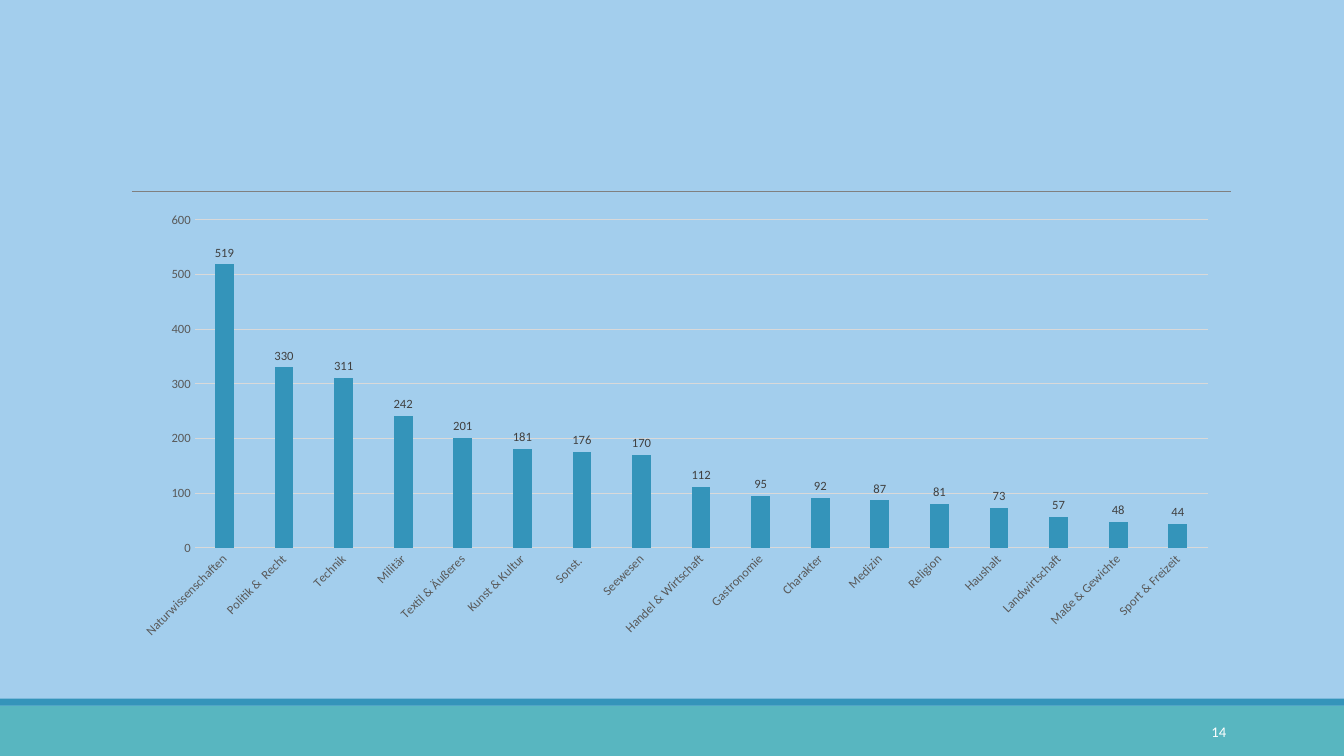
"""Build a slide with a column chart of word counts by subject field."""
from dataclasses import dataclass

from lxml.etree import SubElement
from pptx import Presentation
from pptx.chart.data import CategoryChartData as ChartData
from pptx.dml.color import RGBColor
from pptx.enum.chart import XL_CHART_TYPE as ChartType
from pptx.enum.chart import XL_LABEL_POSITION as LabelPosition
from pptx.enum.chart import XL_TICK_MARK as TickMark
from pptx.enum.shapes import MSO_CONNECTOR as Connector
from pptx.enum.shapes import MSO_SHAPE as Shape
from pptx.enum.text import MSO_ANCHOR as Anchor
from pptx.enum.text import PP_ALIGN as Align
from pptx.oxml.ns import qn
from pptx.util import Pt

WIDTH, HEIGHT = 960, 540
FOOTER_TOP = 504
STRIPE_HEIGHT = 5

COUNTS = {
    "Naturwissenschaften": 519,
    "Politik &  Recht": 330,
    "Technik": 311,
    "Militär": 242,
    "Textil & Äußeres": 201,
    "Kunst & Kultur": 181,
    "Sonst. ": 176,
    "Seewesen": 170,
    "Handel & Wirtschaft": 112,
    "Gastronomie": 95,
    "Charakter": 92,
    "Medizin": 87,
    "Religion": 81,
    "Haushalt": 73,
    "Landwirtschaft": 57,
    "Maße & Gewichte": 48,
    "Sport & Freizeit": 44,
}


@dataclass(frozen=True)
class Theme:
    """Colours, font and type sizes."""

    background: str = "A3CEED"
    footer: str = "58B6C0"
    accent: str = "3494BA"
    rule: str = "808080"
    grid: str = "D9D9D9"
    axis_text: str = "595959"
    label_text: str = "404040"
    footer_text: str = "FFFFFF"
    font: str = "Calibri"
    chart_size: float = 9
    number_size: float = 10.5


def format_font(font, name, size, color):
    """Set the typeface, size and colour of a font."""
    font.name = name
    font.size = Pt(size)
    font.color.rgb = RGBColor.from_string(color)


def write_text(frame, text, align=Align.LEFT, anchor=Anchor.MIDDLE, **font_format):
    """Write one formatted paragraph into a text frame."""
    frame.word_wrap = True
    frame.vertical_anchor = anchor
    paragraph = frame.paragraphs[0]
    paragraph.alignment = align
    run = paragraph.add_run()
    run.text = text
    format_font(run.font, **font_format)


class SlideBuilder:
    """Draws themed elements on one slide."""

    def __init__(self, slide, theme):
        """Keep the slide and theme, and paint the background."""
        self.slide = slide
        self.theme = theme
        self.paint(slide.background.fill, theme.background)

    def paint(self, fill, color):
        """Make a fill solid in one colour."""
        fill.solid()
        fill.fore_color.rgb = RGBColor.from_string(color)

    def stroke(self, line, color, width):
        """Set the colour and width of a line."""
        self.paint(line.fill, color)
        line.width = Pt(width)

    def band(self, top, height, color):
        """Add a band across the full slide width."""
        shape = self.slide.shapes.add_shape(
            Shape.RECTANGLE, Pt(0), Pt(top), Pt(WIDTH), Pt(height)
        )
        shape.shadow.inherit = False
        self.paint(shape.fill, color)
        shape.line.fill.background()

    def rule(self, left, right, top):
        """Add a thin horizontal line."""
        connector = self.slide.shapes.add_connector(
            Connector.STRAIGHT, Pt(left), Pt(top), Pt(right), Pt(top)
        )
        self.stroke(connector.line, self.theme.rule, 0.5)
        SubElement(connector._element.spPr, qn("a:effectLst"))

    def text(self, left, top, width, height, text, **text_format):
        """Add a text box."""
        box = self.slide.shapes.add_textbox(Pt(left), Pt(top), Pt(width), Pt(height))
        write_text(box.text_frame, text, **text_format)

    def column_chart(self, left, top, width, height, values):
        """Add a column chart with value labels and slanted categories."""
        theme = self.theme
        data = ChartData()
        data.categories = list(values)
        data.add_series("Series 1", list(values.values()))
        chart = self.slide.shapes.add_chart(
            ChartType.COLUMN_CLUSTERED, Pt(left), Pt(top), Pt(width), Pt(height), data
        ).chart
        chart.has_legend = False
        chart.has_title = False
        format_font(chart.font, theme.font, theme.chart_size, theme.axis_text)

        for axis in (chart.category_axis, chart.value_axis):
            axis.major_tick_mark = axis.minor_tick_mark = TickMark.NONE
            format_font(
                axis.tick_labels.font, theme.font, theme.chart_size, theme.axis_text
            )
        self.stroke(chart.category_axis.format.line, theme.grid, 0.75)
        chart.category_axis._element.txPr.bodyPr.set("rot", str(-45 * 60000))
        value_axis = chart.value_axis
        value_axis.minimum_scale, value_axis.maximum_scale = 0, 600
        value_axis.major_unit = 100
        value_axis.format.line.fill.background()
        self.stroke(value_axis.major_gridlines.format.line, theme.grid, 0.75)

        plot = chart.plots[0]
        plot.gap_width, plot.overlap = 219, -27
        plot.vary_by_categories = False
        self.paint(plot.series[0].format.fill, theme.accent)
        plot.has_data_labels = True
        labels = plot.data_labels
        labels.show_value = True
        labels.position = LabelPosition.OUTSIDE_END
        format_font(labels.font, theme.font, theme.chart_size, theme.label_text)


def main():
    """Build and save the presentation."""
    presentation = Presentation()
    presentation.slide_width, presentation.slide_height = Pt(WIDTH), Pt(HEIGHT)
    theme = Theme()
    slide = presentation.slides.add_slide(presentation.slide_layouts[6])
    builder = SlideBuilder(slide, theme)
    builder.band(FOOTER_TOP, HEIGHT - FOOTER_TOP, theme.footer)
    builder.band(FOOTER_TOP - STRIPE_HEIGHT, STRIPE_HEIGHT, theme.accent)
    builder.rule(94.3, 879, 136.8)
    builder.column_chart(86.4, 145.5, 792, 316.8, COUNTS)
    builder.text(
        780, 508.5, 103, 28.8, "14", align=Align.RIGHT,
        name=theme.font, size=theme.number_size, color=theme.footer_text,
    )
    presentation.save("out.pptx")


if __name__ == "__main__":
    main()
